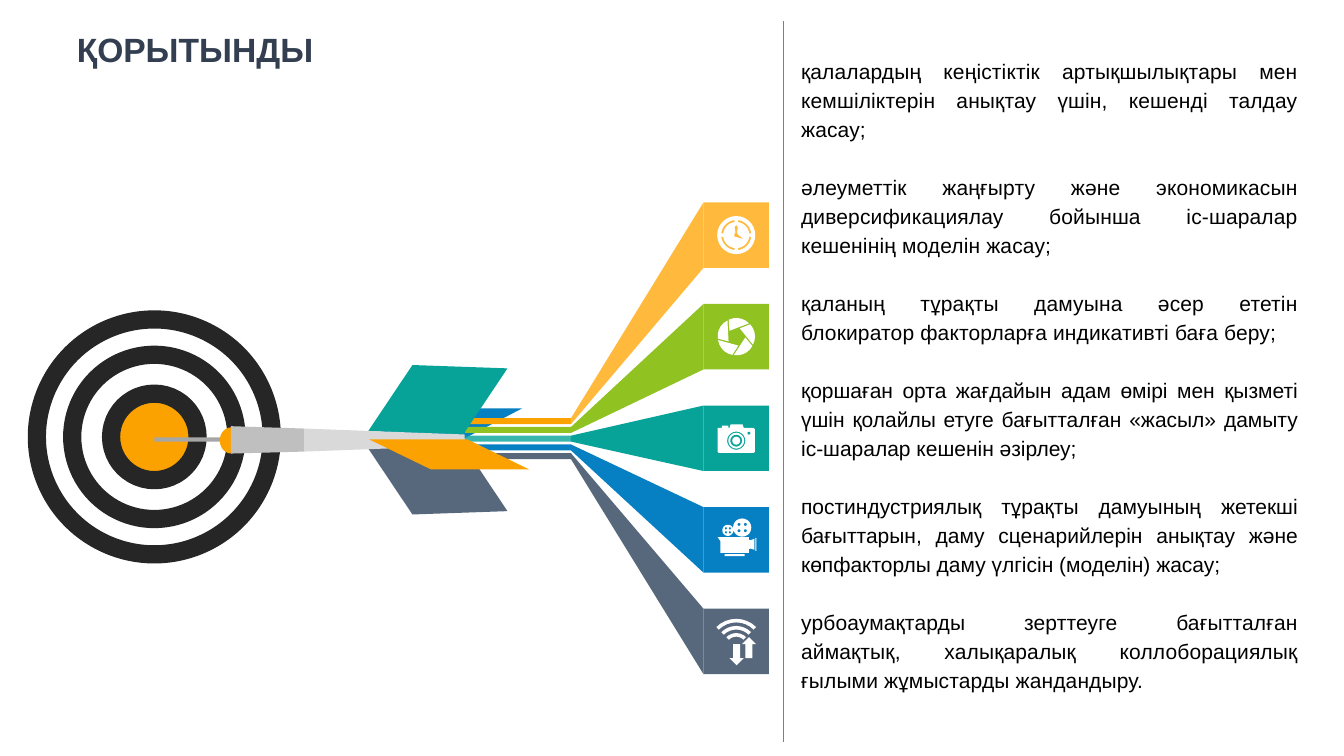
from math import cos, radians, sin

from lxml.etree import SubElement
from pptx import Presentation
from pptx.dml.color import RGBColor
from pptx.enum.shapes import MSO_CONNECTOR, MSO_SHAPE as S
from pptx.enum.text import MSO_ANCHOR, PP_ALIGN
from pptx.oxml.ns import qn
from pptx.util import Cm, Pt

TITLE = "ҚОРЫТЫНДЫ"
# text, letter spacing in hundredths of a point
CONCLUSIONS = [
    ("қалалардың кеңістіктік артықшылықтары мен кемшіліктерін анықтау үшін, кешенді талдау жасау;", 10),
    ("әлеуметтік жаңғырту және экономикасын диверсификациялау бойынша іс-шаралар кешенінің моделін жасау;", 10),
    ("қаланың тұрақты дамуына әсер ететін блокиратор факторларға индикативті баға беру;", 10),
    ("қоршаған орта жағдайын адам өмірі мен қызметі үшін қолайлы етуге бағытталған «жасыл» дамыту іс-шаралар кешенін әзірлеу;", 0),
    ("постиндустриялық тұрақты дамуының жетекші бағыттарын, даму сценарийлерін анықтау және көпфакторлы даму үлгісін (моделін) жасау;", 0),
    ("урбоаумақтарды зерттеуге бағытталған аймақтық, халықаралық коллоборациялық ғылыми жұмыстарды жандандыру.", 10),
]

WHITE, BLACK, ORANGE = "FFFFFF", "262626", "FBA200"
AMBER, GREEN, TEAL, BLUE, SLATE = "FFBA3D", "90C221", "07A398", "0680C3", "57687C"
TILE_COLORS = [AMBER, GREEN, TEAL, BLUE, SLATE]
BAR_COLORS = [ORANGE, GREEN, TEAL, BLUE, SLATE]

# All lengths below are centimetres
TARGET_CENTER = (3.89, 11.01)
TARGET_RINGS = [(5.92, WHITE), (4.14, WHITE), (2.18, ORANGE)]
TILE_LEFT, TILE_TOP, TILE_SIZE, TILE_STEP = 17.73, 5.1, 1.65, 2.56
BAR_LEFT, BAR_TOP, BAR_WIDTH, BAR_HEIGHT, BAR_STEP = 11.71, 10.54, 2.68, 0.15, 0.22

# left, top, width, height, colour, slant, rotation, mirrored
BACK_FIN = (9.27, 10.29, 3.89, 0.76, BLUE, 1.92, 180, False)
SIDE_FINS = [
    (9.31, 11.24, 3.45, 1.7, SLATE, 0.62, 178, True),
    (9.31, 9.22, 3.45, 1.7, TEAL, 0.62, 182, False),
]
FRONT_FIN = (9.3, 11.07, 4.04, 0.76, ORANGE, 2.06, 180, True)
SHAFT = [(7.67, 10.8), (11.71, 10.95), (11.71, 11.23), (7.67, 11.38)]
BARREL = [(5.82, 10.74), (7.67, 10.8), (7.67, 11.38), (5.82, 11.43)]


def arc(x, y, radius, start, end, steps):
    angles = [radians(start + (end - start) * i / steps) for i in range(steps + 1)]
    return [(x + radius * cos(a), y + radius * sin(a)) for a in angles]


def circle(x, y, radius, steps=20):
    return arc(x, y, radius, 0, 360, steps)[:-1]


def band(x, y, outer, inner, start, end):
    return arc(x, y, outer, start, end, 8) + arc(x, y, inner, end, start, 8)


def rectangle(left, top, right, bottom):
    return [(left, top), (right, top), (right, bottom), (left, bottom)]


def blade(vertex, scale=0.92):
    """Aperture blade from one corner of the central opening out to the rim."""
    points = arc(0, 0, 0.23, vertex, vertex, 1)[:1] + arc(0, 0, 0.48, vertex + 30, vertex + 102, 5)
    mid_x, mid_y = (sum(axis) / len(points) for axis in zip(*points))
    return [(mid_x + scale * (x - mid_x), mid_y + scale * (y - mid_y)) for x, y in points]


def reel(x, y, radius, offset, hole):
    return [circle(x, y, radius)] + [
        circle(x + dx, y + dy, hole, 8) for dx in (-offset, offset) for dy in (-offset, offset)]


def vertical_arrow(x, tip, tail):
    neck = tip + (0.18 if tail > tip else -0.18)
    return [(x, tip), (x + 0.18, neck), (x + 0.09, neck), (x + 0.09, tail),
            (x - 0.09, tail), (x - 0.09, neck), (x - 0.18, neck)]


# Icon contours around the tile centre; a contour inside another is a hole
CLOCK = [
    circle(0, 0, 0.48, 28),
    *[band(0, 0, 0.38, 0.33, start + 7, start + 83) for start in range(0, 360, 90)],
    [(0, -0.26), (0.04, -0.2), (0.02, -0.06), (0.06, 0), (0.19, 0.1),
     (0.04, 0.06), (-0.05, 0.04), (-0.05, -0.03), (-0.02, -0.06), (-0.04, -0.2)],
]
APERTURE = [blade(vertex) for vertex in range(-74, 286, 72)]
PHOTO_CAMERA = [
    [(-0.47, -0.26), (-0.36, -0.26), (-0.36, -0.32), (-0.2, -0.32), (-0.2, -0.26),
     (-0.17, -0.26), (-0.14, -0.35), (0.16, -0.35), (0.19, -0.26), (0.44, -0.26),
     (0.47, -0.23), (0.47, 0.34), (0.44, 0.37), (-0.44, 0.37), (-0.47, 0.34)],
    *[circle(0, 0.06, radius) for radius in (0.23, 0.2, 0.15, 0.1)],
    circle(0.32, -0.13, 0.04, 8),
]
FILM_CAMERA = [
    *reel(0.15, -0.31, 0.23, 0.08, 0.04),
    *reel(-0.21, -0.24, 0.14, 0.05, 0.03),
    [(-0.47, -0.07), (0.32, -0.07), (0.32, 0.0), (0.36, 0.01), (0.46, -0.03), (0.46, 0.25),
     (0.36, 0.22), (0.32, 0.23), (0.32, 0.33), (-0.4, 0.33), (-0.4, 0.03)],
    rectangle(-0.29, 0.36, 0.21, 0.41),
    rectangle(0.48, -0.05, 0.51, 0.28),
]
WIRELESS = [
    *[band(0, 0.14, radius, radius - 0.09, 225, 315) for radius in (0.71, 0.53, 0.35)],
    vertical_arrow(0.01, 0.6, 0.07),
    vertical_arrow(0.32, -0.11, 0.42),
]
ICONS = [CLOCK, APERTURE, PHOTO_CAMERA, FILM_CAMERA, WIRELESS]


def rgb(color):
    return RGBColor.from_string(color)


def paint(shape, color):
    shape.shadow.inherit = False
    shape.fill.solid()
    shape.fill.fore_color.rgb = rgb(color)
    shape.line.fill.background()
    return shape


def add_preset(preset, left, top, width, height, color, rotation=0, adjustments=()):
    shape = slide.shapes.add_shape(preset, Cm(left), Cm(top), Cm(width), Cm(height))
    shape.rotation = rotation
    for i, value in enumerate(adjustments):
        shape.adjustments[i] = value
    return paint(shape, color)


def add_outline(contours, color, x=0, y=0):
    """Draw all contours as one shape, shifted by x and y."""
    builder = None
    for contour in contours:
        start, *rest = [(Cm(x + dx), Cm(y + dy)) for dx, dy in contour]
        if builder is None:
            builder = slide.shapes.build_freeform(*start)
        else:
            builder.move_to(*start)
        builder.add_line_segments(rest, close=True)
    paint(builder.convert_to_shape(), color)


def add_fin(left, top, width, height, color, slant, rotation, mirrored):
    fin = add_preset(S.PARALLELOGRAM, left, top, width, height, color, rotation, [slant])
    if mirrored:
        fin._element.spPr.find(qn("a:xfrm")).set("flipH", "1")


def add_text(box, paragraphs, font_format, paragraph_format, color, gap=0, anchor=MSO_ANCHOR.TOP):
    frame = slide.shapes.add_textbox(*map(Cm, box)).text_frame
    frame.word_wrap = True
    frame.vertical_anchor = anchor
    for i, (text, letter_spacing) in enumerate(paragraphs):
        paragraph = frame.paragraphs[0] if i == 0 else frame.add_paragraph()
        run = paragraph.add_run()
        run.text = text
        run.font.color.rgb = rgb(color)
        for target, values in [(run.font, font_format), (paragraph, paragraph_format)]:
            for key, value in values.items():
                setattr(target, key, value)
        if letter_spacing:
            run._r.get_or_add_rPr().set("spc", str(letter_spacing))
        if i:
            paragraph.space_before = Pt(gap)


prs = Presentation()
prs.slide_width, prs.slide_height = Cm(33.87), Cm(19.05)
slide = prs.slides.add_slide(prs.slide_layouts[6])

center_x, center_y = TARGET_CENTER
for size, color in TARGET_RINGS:
    ring = add_preset(S.OVAL, center_x - size / 2, center_y - size / 2, size, size, color)
    ring.line.color.rgb = rgb(BLACK)
    ring.line.width = Pt(13)

add_fin(*BACK_FIN)
for i, (tile_color, bar_color, icon) in enumerate(zip(TILE_COLORS, BAR_COLORS, ICONS)):
    tile_top = TILE_TOP + i * TILE_STEP
    bar_top = BAR_TOP + i * BAR_STEP
    bar_right = BAR_LEFT + BAR_WIDTH
    add_preset(S.RECTANGLE, TILE_LEFT, tile_top, TILE_SIZE, TILE_SIZE, tile_color)
    bar = add_preset(S.RECTANGLE, BAR_LEFT, bar_top, BAR_WIDTH, BAR_HEIGHT, bar_color)
    if bar_color == TEAL:
        SubElement(bar._element.spPr.find(".//" + qn("a:srgbClr")), qn("a:alpha"), val="80000")
    beam = [(bar_right, bar_top), (TILE_LEFT, tile_top),
            (TILE_LEFT, tile_top + TILE_SIZE), (bar_right, bar_top + BAR_HEIGHT)]
    add_outline([beam], tile_color)
    add_outline(icon, WHITE, TILE_LEFT + TILE_SIZE / 2, tile_top + TILE_SIZE / 2)

add_preset(S.RECTANGLE, 3.89, 11.02, 2.03, 0.11, "A6A6A6")
for fin in SIDE_FINS:
    add_fin(*fin)
add_outline([SHAFT], "D9D9D9")
add_preset(S.CHORD, 5.54, 10.77, 0.58, 0.66, ORANGE, 0, [53.91, 162])
add_outline([BARREL], "BFBFBF")
add_fin(*FRONT_FIN)

add_text((19.94, 1.26, 13.03, 16.41), CONCLUSIONS, {"name": "Arial", "size": Pt(15)},
         {"alignment": PP_ALIGN.JUSTIFY, "line_spacing": Pt(20.7)}, "000000", gap=20.7)
add_text((0.9, 0.72, 8.03, 1.17), [(TITLE, 0)], {"name": "Arial", "size": Pt(24), "bold": True},
         {"alignment": PP_ALIGN.CENTER, "line_spacing": 0.9}, "333F50", anchor=MSO_ANCHOR.MIDDLE)

divider = slide.shapes.add_connector(MSO_CONNECTOR.STRAIGHT, Cm(19.74), Cm(0.53), Cm(19.74), Cm(18.69))
divider.line.color.rgb = rgb("7F7F7F")
divider.line.width = Pt(0.5)
SubElement(divider._element.spPr, qn("a:effectLst"))

prs.save("out.pptx")
